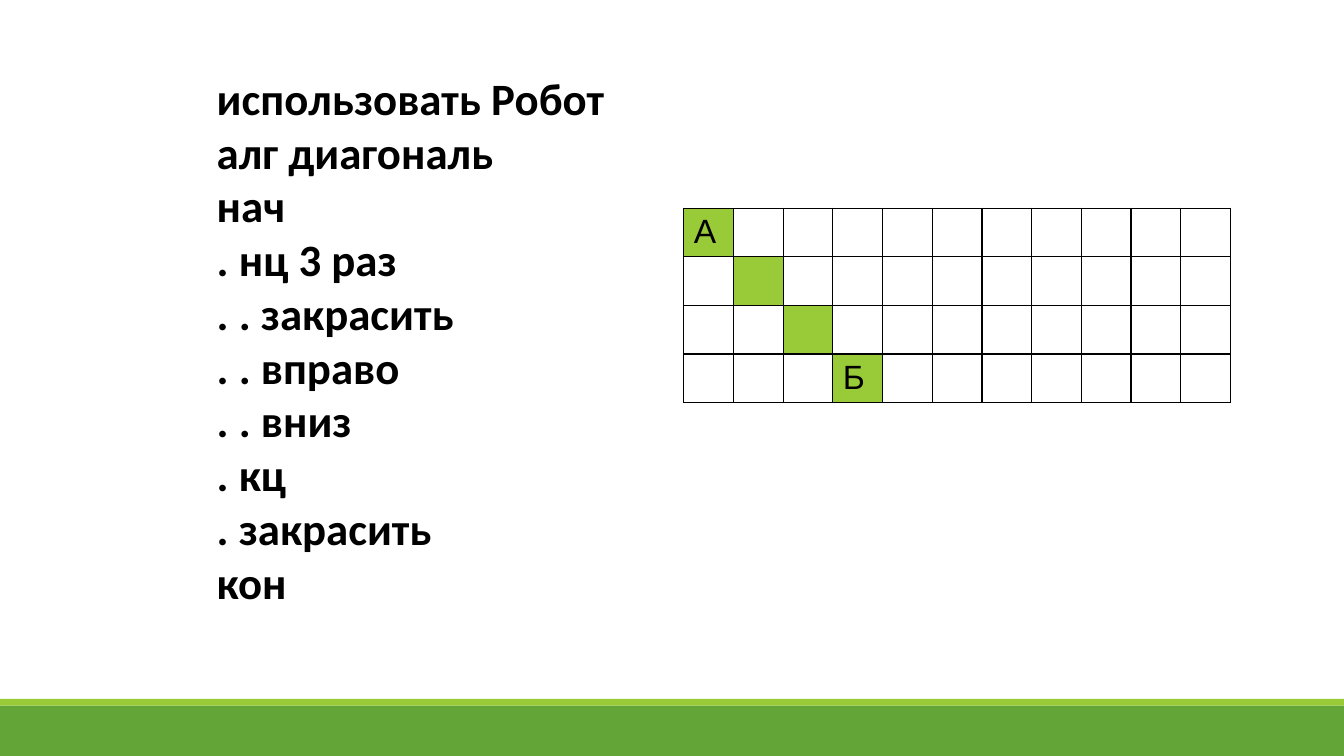
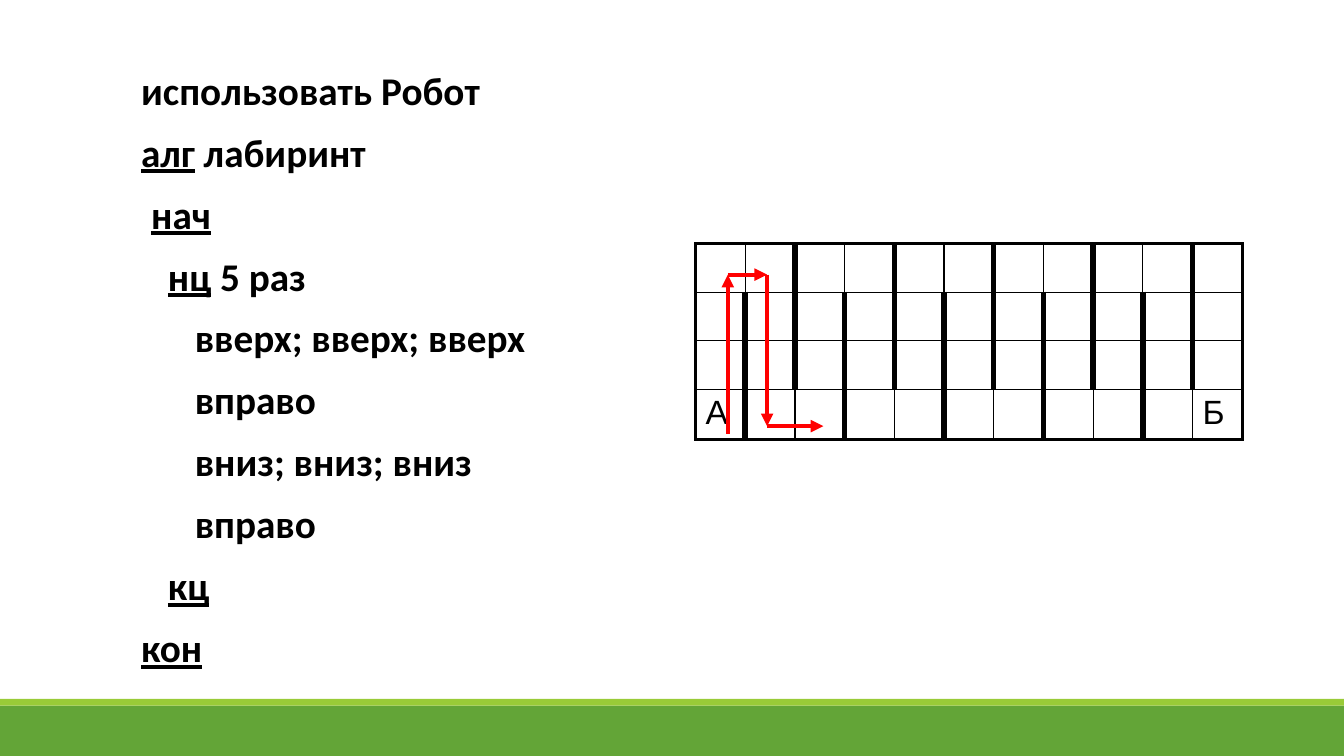
import pptx
import pptx.dml.color
import pptx.enum.shapes
import pptx.oxml
import pptx.oxml.ns
import pptx.util

BLACK = pptx.dml.color.RGBColor(0x00, 0x00, 0x00)
WHITE = pptx.dml.color.RGBColor(0xFF, 0xFF, 0xFF)
RED = pptx.dml.color.RGBColor(0xFF, 0x00, 0x00)
GREEN = pptx.dml.color.RGBColor(0x63, 0xA5, 0x37)
LIME = pptx.dml.color.RGBColor(0x99, 0xCB, 0x38)

GRID_COLUMNS, GRID_ROWS = 160, 90
FIELD_COLUMNS, FIELD_ROWS = 11, 4
CELL_WIDTH, CELL_HEIGHT = 5.92, 5.78  # in grid units
THIN, FRAME, WALL = 1, 2.25, 4.5

DIAGONAL_CODE = [
    "использовать Робот", "алг диагональ", "нач", ". нц 3 раз",
    ". . закрасить", ". . вправо", ". . вниз", ". кц", ". закрасить", "кон",
]
# Indent in grid units, underlined keyword, rest of the line
MAZE_CODE = [
    (0, "", "использовать Робот"),
    (0, "алг", " лабиринт"),
    (1.2, "нач", ""),
    (3.2, "нц", " 5 раз"),
    (6.4, "", "вверх; вверх; вверх"),
    (6.4, "", "вправо"),
    (6.4, "", "вниз; вниз; вниз"),
    (6.4, "", "вправо"),
    (3.2, "кц", ""),
    (0, "кон", ""),
]
# Points of the robot's path, in field cells
MAZE_ROUTE = [(0.65, 3.92), (0.65, 0.64), (1.44, 0.64), (1.44, 3.76), (2.57, 3.76)]


def plain_border(row, column, side):
    return THIN


def maze_border(row, column, side):
    """Walls leave a gap alternately in the top and the bottom row."""
    if side in "TB":
        outer = row == (0 if side == "T" else FIELD_ROWS - 1)
        return FRAME if outer else THIN
    edge = column if side == "L" else column + 1
    if edge in (0, FIELD_COLUMNS):
        return FRAME
    opening = (row == 0 and edge % 2 == 1) or (row == FIELD_ROWS - 1 and edge % 2 == 0)
    return THIN if opening else WALL


class Deck:
    def __init__(self):
        self.presentation = pptx.Presentation()
        self.presentation.slide_width = pptx.util.Inches(13.33)
        self.presentation.slide_height = pptx.util.Inches(7.5)
        self.slide = None

    def x(self, columns):
        return round(self.presentation.slide_width * columns / GRID_COLUMNS)

    def y(self, rows):
        return round(self.presentation.slide_height * rows / GRID_ROWS)

    def new_slide(self):
        self.slide = self.presentation.slides.add_slide(self.presentation.slide_layouts[6])
        self.band(84, 6, GREEN)
        self.band(83.2, 0.8, LIME)

    def band(self, top, height, color):
        band = self.slide.shapes.add_shape(
            pptx.enum.shapes.MSO_SHAPE.RECTANGLE, 0, self.y(top), self.x(GRID_COLUMNS), self.y(height))
        band.shadow.inherit = False
        band.fill.solid()
        band.fill.fore_color.rgb = color
        band.line.fill.background()

    def style(self, run, size, font, bold=False):
        run.font.size = pptx.util.Pt(size)
        run.font.name = font
        run.font.bold = bold
        run.font.color.rgb = BLACK

    def code(self, left, top, width, height, lines, size, line_spacing=1.0, before=0, after=0):
        """Program listing; each line is (indent, underlined keyword, rest)."""
        listing = self.slide.shapes.add_textbox(
            self.x(left), self.y(top), self.x(width), self.y(height)).text_frame
        listing.word_wrap = True
        listing.margin_left = listing.margin_right = 0
        for index, (indent, keyword, rest) in enumerate(lines):
            line = listing.add_paragraph() if index else listing.paragraphs[0]
            line.line_spacing = line_spacing
            line.space_before = pptx.util.Pt(before)
            line.space_after = pptx.util.Pt(after)
            line._p.get_or_add_pPr().set("marL", str(self.x(indent)))
            for text, underlined in ((keyword, True), (rest, False)):
                if text:
                    run = line.add_run()
                    run.text = text
                    self.style(run, size, "Calibri", bold=True)
                    run.font.underline = underlined

    def field(self, left, top, labels, painted=(), border=plain_border):
        """Robot's field; labels maps (row, column) to a letter."""
        field = self.slide.shapes.add_table(
            FIELD_ROWS, FIELD_COLUMNS, self.x(left), self.y(top),
            self.x(CELL_WIDTH * FIELD_COLUMNS), self.y(CELL_HEIGHT * FIELD_ROWS)).table
        field.first_row = field.horz_banding = False
        for row in range(FIELD_ROWS):
            for column in range(FIELD_COLUMNS):
                cell = field.cell(row, column)
                for side in "LRTB":
                    self.cell_border(cell, side, border(row, column, side))
                cell.fill.solid()
                cell.fill.fore_color.rgb = LIME if (row, column) in painted else WHITE
                if (row, column) in labels:
                    cell.text_frame.text = labels[row, column]
                    self.style(cell.text_frame.paragraphs[0].runs[0], 24, "Arial")

    def cell_border(self, cell, side, points):
        cell._tc.get_or_add_tcPr().append(pptx.oxml.parse_xml(
            f'<a:ln{side} {pptx.oxml.ns.nsdecls("a")} w="{pptx.util.Pt(points)}">'
            f'<a:solidFill><a:srgbClr val="{BLACK}"/></a:solidFill></a:ln{side}>'))

    def route(self, left, top, points):
        """Chain of arrows over a field placed at left, top."""
        stops = [(self.x(left + column * CELL_WIDTH), self.y(top + row * CELL_HEIGHT))
                 for column, row in points]
        for start, end in zip(stops, stops[1:]):
            step = self.slide.shapes.add_connector(
                pptx.enum.shapes.MSO_CONNECTOR.STRAIGHT, *start, *end)
            step.line.color.rgb = RED
            step.line.width = pptx.util.Pt(3)
            namespace = pptx.oxml.ns.nsdecls("a")
            step.line._get_or_add_ln().append(
                pptx.oxml.parse_xml(f'<a:tailEnd {namespace} type="triangle"/>'))
            step._element.spPr.append(pptx.oxml.parse_xml(f"<a:effectLst {namespace}/>"))


def main():
    deck = Deck()

    deck.new_slide()
    deck.field(81.4, 24.8, {(0, 0): "А", (3, 3): "Б"},
               painted=[(step, step) for step in range(FIELD_ROWS)])
    deck.code(25.8, 7.8, 106, 72, [(0, "", line) for line in DIAGONAL_CODE], 32)

    deck.new_slide()
    deck.code(16.8, 7.9, 100, 60, MAZE_CODE, 28, line_spacing=0.9, before=12, after=2)
    maze = (82.8, 29)
    deck.field(*maze, {(3, 0): "А", (3, 10): "Б"}, border=maze_border)
    deck.route(*maze, MAZE_ROUTE)

    deck.presentation.save("out.pptx")


if __name__ == "__main__":
    main()
